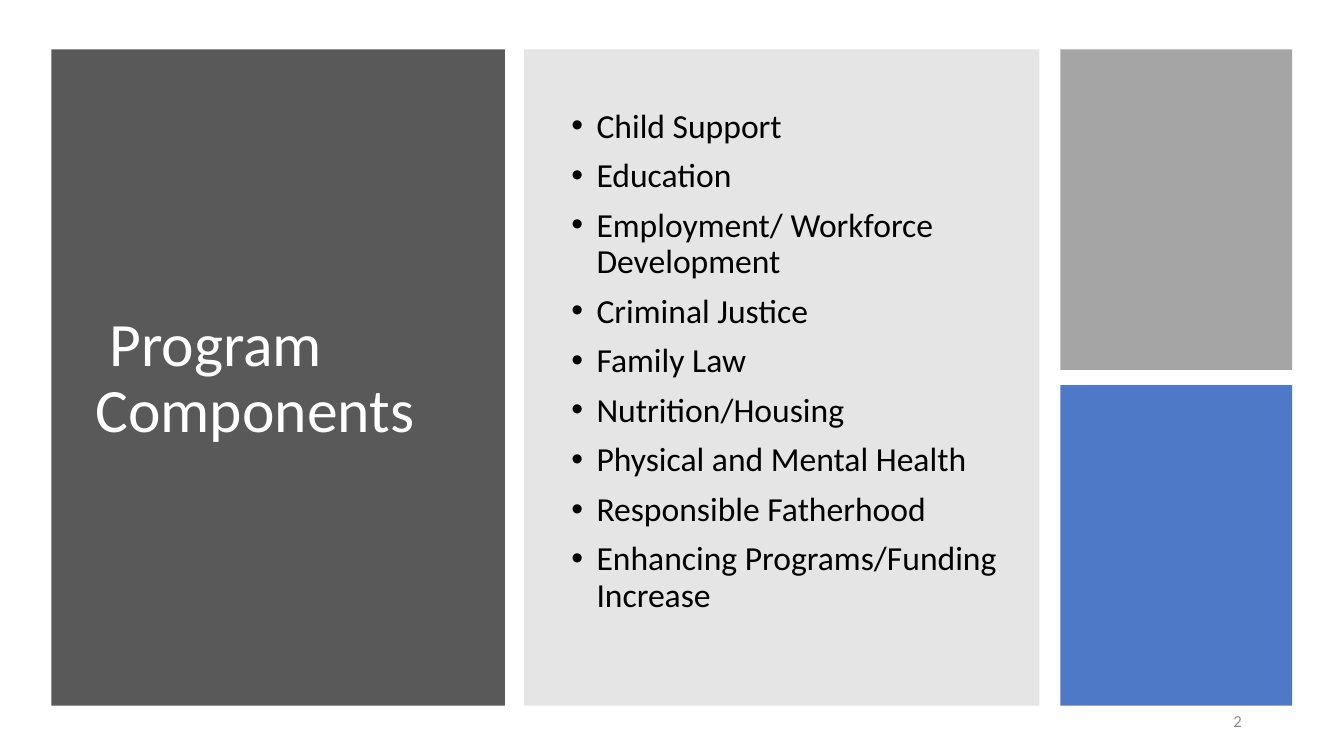
import pptx
import pptx.dml.color
import pptx.enum.shapes
import pptx.enum.text
import pptx.oxml.ns
import pptx.util
from lxml import etree

Pt = pptx.util.Pt
RGBColor = pptx.dml.color.RGBColor
ALIGN = pptx.enum.text.PP_ALIGN
ANCHOR = pptx.enum.text.MSO_ANCHOR
qn = pptx.oxml.ns.qn

DARK_GRAY = RGBColor(0x59, 0x59, 0x59)
MID_GRAY = RGBColor(0x80, 0x80, 0x80)
LIGHT_GRAY = RGBColor(0xA5, 0xA5, 0xA5)
BLUE = RGBColor(0x44, 0x72, 0xC4)
NUMBER_GRAY = RGBColor(0x8C, 0x8C, 0x8C)
WHITE = RGBColor(0xFF, 0xFF, 0xFF)
BLACK = RGBColor(0, 0, 0)
FONT = "Calibri"

TITLE = " Program Components"
COMPONENTS = [
    "Child Support",
    "Education",
    "Employment/ Workforce Development",
    "Criminal Justice",
    "Family Law",
    "Nutrition/Housing",
    "Physical and Mental Health",
    "Responsible Fatherhood",
    "Enhancing Programs/Funding Increase",
]
PAGE_NUMBER = "2"

TOP, HEIGHT = 35.3, 468.7
TILE_GAP = 10.8
TILE_HEIGHT = (HEIGHT - TILE_GAP) / 2
TILE_LEFT, TILE_WIDTH = 757.4, 165.6
BULLET_INDENT = 18

PANELS = [
    (36.7, TOP, 324, HEIGHT, DARK_GRAY, 100),
    (374.4, TOP, 368, HEIGHT, MID_GRAY, 20),
    (TILE_LEFT, TOP, TILE_WIDTH, TILE_HEIGHT, LIGHT_GRAY, 100),
    (TILE_LEFT, TOP + TILE_HEIGHT + TILE_GAP, TILE_WIDTH, TILE_HEIGHT, BLUE, 95),
]


def add_panel(slide, left, top, width, height, color, opacity):
    panel = slide.shapes.add_shape(
        pptx.enum.shapes.MSO_SHAPE.RECTANGLE, Pt(left), Pt(top), Pt(width), Pt(height))
    panel.shadow.inherit = False
    panel.line.fill.background()
    panel.fill.solid()
    panel.fill.fore_color.rgb = color
    if opacity < 100:
        fill_color = panel.fill._xPr.find(qn("a:solidFill"))[0]
        etree.SubElement(fill_color, qn("a:alpha")).set("val", str(opacity * 1000))


def add_text(slide, box, lines, size, color, anchor=ANCHOR.MIDDLE,
             align=ALIGN.LEFT, line_spacing=0.9, space_after=0):
    frame = slide.shapes.add_textbox(*map(Pt, box)).text_frame
    frame.word_wrap = True
    frame.vertical_anchor = anchor
    frame.text = "\n".join(lines)
    for paragraph in frame.paragraphs:
        paragraph.alignment = align
        paragraph.line_spacing = line_spacing
        paragraph.space_after = Pt(space_after)
        paragraph.font.name = FONT
        paragraph.font.size = Pt(size)
        paragraph.font.color.rgb = color
    return frame


def add_bullets(frame):
    for paragraph in frame.paragraphs:
        properties = paragraph._p.get_or_add_pPr()
        properties.set("marL", str(Pt(BULLET_INDENT)))
        properties.set("indent", str(-Pt(BULLET_INDENT)))
        font = etree.Element(qn("a:buFont"), typeface="Arial")
        bullet = etree.Element(qn("a:buChar"), char="•")
        position = properties.index(properties.find(qn("a:defRPr")))
        properties[position:position] = [font, bullet]


def main():
    presentation = pptx.Presentation()
    presentation.slide_width = Pt(960)
    presentation.slide_height = Pt(540)
    slide = presentation.slides.add_slide(presentation.slide_layouts[6])
    for panel in PANELS:
        add_panel(slide, *panel)
    add_text(slide, (61.2, 59.8, 276.5, 422.6), [TITLE], 44, WHITE)
    add_bullets(add_text(slide, (401, 74.4, 318.2, 408), COMPONENTS, 24, BLACK,
                         anchor=ANCHOR.TOP, space_after=9.5))
    add_text(slide, (678.2, 500.4, 216, 28.8), [PAGE_NUMBER], 12, NUMBER_GRAY,
             align=ALIGN.RIGHT, line_spacing=1.0)
    presentation.save("out.pptx")


if __name__ == "__main__":
    main()
